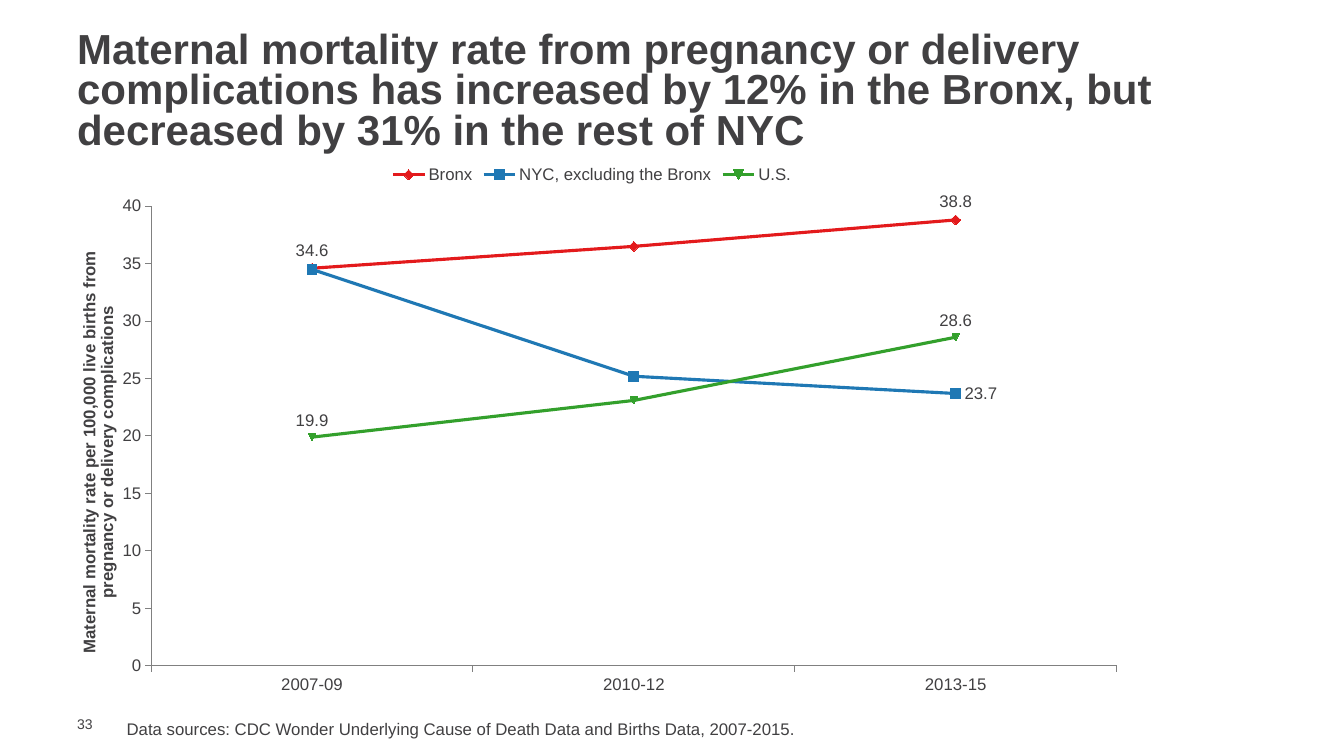
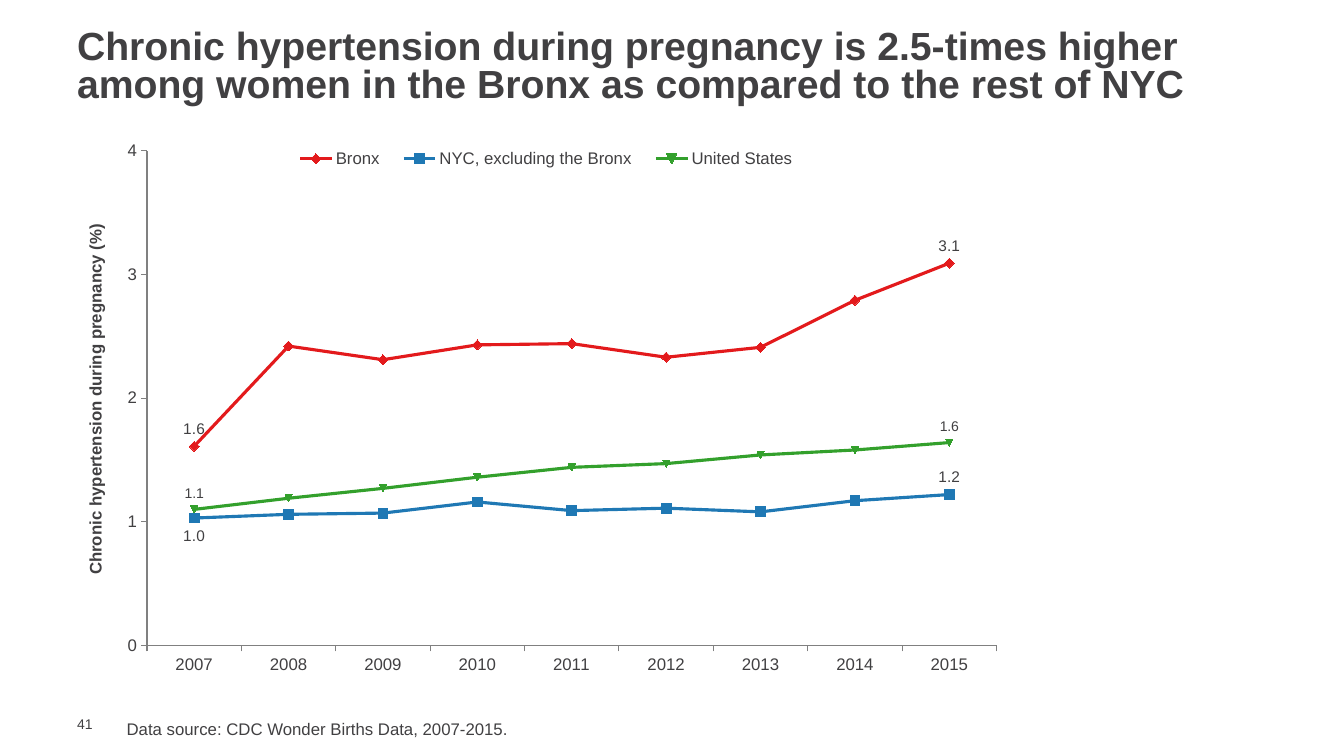
from dataclasses import dataclass

from lxml.etree import SubElement
from pptx import Presentation
from pptx.chart.data import CategoryChartData
from pptx.dml.color import RGBColor as RGB
from pptx.enum.chart import XL_CHART_TYPE as ChartType, XL_LABEL_POSITION as Pos
from pptx.enum.chart import XL_LEGEND_POSITION as LegendPos, XL_MARKER_STYLE as Mark
from pptx.enum.chart import XL_TICK_MARK as Tick
from pptx.enum.text import MSO_ANCHOR as Anchor
from pptx.oxml.ns import qn
from pptx.util import Inches, Pt

CELL = Inches(1) / 12
COLS, ROWS = 160, 90
LEFT = 8


@dataclass(frozen=True)
class Theme:
    """Colours, font and type sizes shared by the slides."""
    font: str = "Arial"
    ink: RGB = RGB(0x41, 0x40, 0x42)
    axis: RGB = RGB(0x80, 0x80, 0x80)
    body: int = 12
    small: int = 10
    line: float = 2.25
    series: tuple = (
        (RGB(0xE3, 0x1A, 0x1C), Mark.DIAMOND, 7),
        (RGB(0x1F, 0x78, 0xB4), Mark.SQUARE, 7),
        (RGB(0x33, 0xA0, 0x2C), Mark.AUTOMATIC, 5),
    )


THEME = Theme()

SLIDES = [
    dict(
        title="Maternal mortality rate from pregnancy or delivery complications has "
              "increased by 12% in the Bronx, but decreased by 31% in the rest of NYC",
        title_size=30, title_box=(LEFT, 3.2, 144, 15.7), number="33",
        source="Data sources: CDC Wonder Underlying Cause of Death Data and "
               "Births Data, 2007-2015.",
        chart=dict(
            box=(LEFT, 18.4, 125, 65.4), plot=(0.08, 0.094, 0.92, 0.837),
            legend=None, axis_title_at=(0.008, 0.17),
            axis_title="Maternal mortality rate per 100,000 live births from "
                       "pregnancy or delivery complications",
            top=40, step=5, cats=["2007-09", "2010-12", "2013-15"],
            series=[
                ("Bronx", [34.6, 36.5, 38.8], 12, {0: Pos.ABOVE, 2: Pos.ABOVE}),
                ("NYC, excluding the Bronx", [34.5, 25.2, 23.7], 12, {2: Pos.RIGHT}),
                ("U.S.", [19.9, 23.1, 28.6], 12, {0: Pos.ABOVE, 2: Pos.ABOVE}),
            ])),
    dict(
        title="Chronic hypertension during pregnancy is 2.5-times higher among women "
              "in the Bronx as compared to the rest of NYC",
        title_size=28, title_box=(LEFT, 3, 144, 10.2), number="41",
        source="Data source: CDC Wonder Births Data, 2007-2015.",
        chart=dict(
            box=(8.1, 16.3, 110.6, 65.4), plot=(0.085, 0.025, 0.915, 0.901),
            legend=(0.23, 0.02, 0.57, 0.04), axis_title_at=(0.015, 0.153),
            axis_title="Chronic hypertension during pregnancy (%)",
            top=4, step=1, cats=[str(year) for year in range(2007, 2016)],
            series=[
                ("Bronx", [1.61, 2.42, 2.31, 2.43, 2.44, 2.33, 2.41, 2.79, 3.09],
                 11, {0: Pos.ABOVE, 8: Pos.ABOVE}),
                ("NYC, excluding the Bronx",
                 [1.03, 1.06, 1.07, 1.16, 1.09, 1.11, 1.08, 1.17, 1.22],
                 11, {0: Pos.BELOW, 8: Pos.ABOVE}),
                ("United States",
                 [1.1, 1.19, 1.27, 1.36, 1.44, 1.47, 1.54, 1.58, 1.64],
                 10, {0: Pos.ABOVE, 8: Pos.ABOVE}),
            ])),
]


def grid(box):
    """Turn a box in grid cells into slide lengths."""
    return [round(cells * CELL) for cells in box]


def apply(obj, **fmt):
    """Set each format value on an object."""
    for name, value in fmt.items():
        setattr(obj, name, value)


def set_font(font, size, bold=False):
    """Give a font the theme's face and ink."""
    apply(font, name=THEME.font, size=Pt(size), bold=bold)
    font.color.rgb = THEME.ink


def add_text(s, box, text, size, bold=False, spacing=None, **frame):
    """Write one paragraph in a box."""
    tf = s.shapes.add_textbox(*grid(box)).text_frame
    apply(tf, word_wrap=True, **frame)
    p = tf.paragraphs[0]
    p.line_spacing = spacing
    r = p.add_run()
    r.text = text
    set_font(r.font, size, bold)


def set_layout(parent, index, box, inner=False):
    """Place a chart part by shares of the chart's size."""
    for old in parent.findall(qn("c:layout")):
        parent.remove(old)
    layout = SubElement(parent, qn("c:layout"))
    parent.insert(index, layout)
    manual = SubElement(layout, qn("c:manualLayout"))
    values = [("layoutTarget", "inner")] if inner else []
    values += [("xMode", "edge"), ("yMode", "edge"), *zip("xywh", box)]
    for tag, value in values:
        SubElement(manual, qn(f"c:{tag}")).set("val", str(value))


def format_axes(chart, spec):
    """Style both axes and the value axis title."""
    for axis in (chart.category_axis, chart.value_axis):
        apply(axis, has_major_gridlines=False, major_tick_mark=Tick.OUTSIDE,
              minor_tick_mark=Tick.NONE)
        axis.format.line.color.rgb = THEME.axis
        axis.format.line.width = Pt(0.75)
        set_font(axis.tick_labels.font, THEME.body)
    axis = chart.value_axis
    apply(axis, minimum_scale=0, maximum_scale=spec["top"], major_unit=spec["step"])
    apply(axis.tick_labels, number_format="0", number_format_is_linked=False)
    title = axis.axis_title
    p = title.text_frame.paragraphs[0]
    r = p.add_run()
    r.text = spec["axis_title"]
    set_font(r.font, THEME.body, True)
    body = title._element.find(".//" + qn("a:bodyPr"))
    body.set("rot", "-5400000")
    body.set("vert", "horz")
    set_layout(title._element, 1, spec["axis_title_at"])


def format_series(series, look, size, labels):
    """Style one line, its markers and its labelled points."""
    color, mark, mark_size = look
    series.smooth = False
    series.format.line.color.rgb = color
    series.format.line.width = Pt(THEME.line)
    apply(series.marker, style=mark, size=mark_size)
    series.marker.format.fill.solid()
    series.marker.format.fill.fore_color.rgb = color
    series.marker.format.line.color.rgb = color
    series.data_labels.show_value = False
    for index, pos in labels.items():
        label = series.points[index].data_label
        set_font(label.font, size)
        label.position = pos


def add_line_chart(s, spec):
    """Draw the line chart with its legend and axes."""
    data = CategoryChartData(number_format="0.0")
    data.categories = spec["cats"]
    for name, values, _, _ in spec["series"]:
        data.add_series(name, values)
    chart = s.shapes.add_chart(ChartType.LINE_MARKERS, *grid(spec["box"]), data).chart
    apply(chart, has_title=False, has_legend=True)
    set_font(chart.font, THEME.small)
    apply(chart.legend, position=LegendPos.TOP, include_in_layout=False)
    set_font(chart.legend.font, THEME.body)
    if spec["legend"]:
        set_layout(chart.legend._element, 1, spec["legend"])
    plot = chart.plots[0]
    plot.vary_by_categories = False
    set_layout(plot._element.getparent(), 0, spec["plot"], inner=True)
    format_axes(chart, spec)
    for series, look, (_, _, size, labels) in zip(plot.series, THEME.series, spec["series"]):
        format_series(series, look, size, labels)


def add_footer(s, number, source):
    """Write the slide number and the data source."""
    add_text(s, (LEFT, 85.2, 5.2, 2), number, THEME.small, vertical_anchor=Anchor.MIDDLE,
             margin_top=0, margin_right=0, margin_bottom=0)
    add_text(s, (13.9, 85, 119, 3.6), source, THEME.body)


def add_chart_slide(prs, content):
    """Build a slide with a title, a line chart and a footer."""
    s = prs.slides.add_slide(prs.slide_layouts[6])
    add_text(s, content["title_box"], content["title"], content["title_size"], bold=True,
             spacing=0.8, vertical_anchor=Anchor.MIDDLE)
    add_line_chart(s, content["chart"])
    add_footer(s, content["number"], content["source"])


def main():
    """Build and save the presentation."""
    prs = Presentation()
    prs.slide_width, prs.slide_height = grid((COLS, ROWS))
    for content in SLIDES:
        add_chart_slide(prs, content)
    prs.save("out.pptx")


if __name__ == "__main__":
    main()
